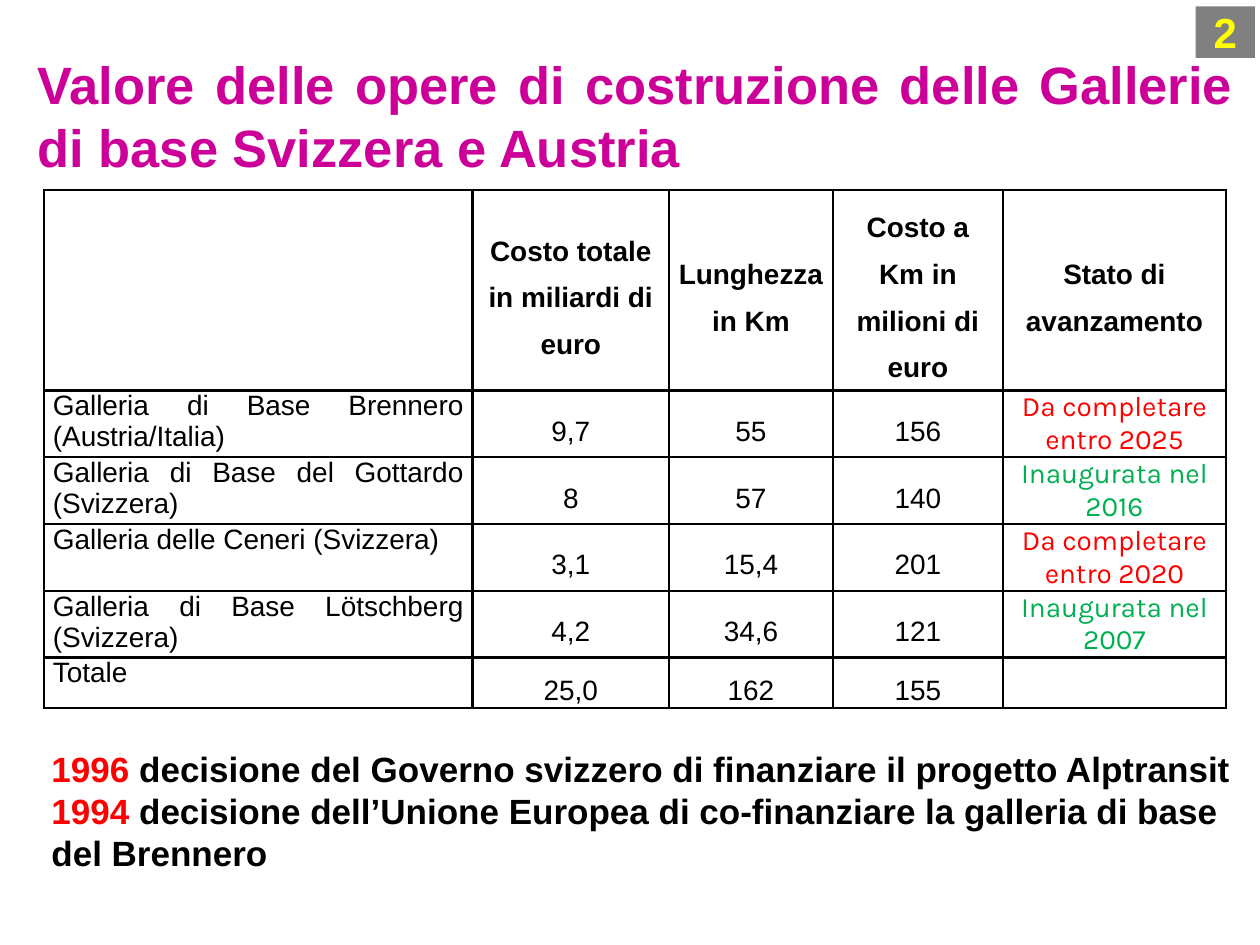
"""Build a slide on the value of the Swiss and Austrian base tunnels."""
import lxml.etree
import pptx
import pptx.dml.color
import pptx.enum.shapes
import pptx.enum.text
import pptx.oxml.ns
import pptx.util

Inches = pptx.util.Inches
ALIGN = pptx.enum.text.PP_ALIGN
ANCHOR = pptx.enum.text.MSO_ANCHOR

BLACK, RED, GREEN = "000000", "FF0000", "00B050"
COLUMN_WIDTHS = [3.4, 1.56, 1.3, 1.35, 1.77]
ROW_HEIGHTS = [1.59] + [0.53] * 4 + [0.4]
HEADINGS = ["", "Costo totale in miliardi di euro", "Lunghezza in Km",
            "Costo a Km in milioni di euro", "Stato di avanzamento"]
TUNNELS = [
    ["Galleria di Base Brennero (Austria/Italia)", "9,7", "55", "156", "Da completare\nentro 2025"],
    ["Galleria di Base del Gottardo (Svizzera)", "8", "57", "140", "Inaugurata nel 2016"],
    ["Galleria delle Ceneri (Svizzera)", "3,1", "15,4", "201", "Da completare entro 2020"],
    ["Galleria di Base Lötschberg (Svizzera)", "4,2", "34,6", "121", "Inaugurata nel 2007"],
    ["Totale", "25,0", "162", "155", ""],
]
DECISIONS = [
    ("1996 ", "decisione del Governo svizzero di finanziare il progetto Alptransit"),
    ("1994", " decisione dell’Unione Europea di co-finanziare la galleria di base del Brennero"),
]


def color(value):
    return pptx.dml.color.RGBColor.from_string(value)


def style_font(font, size, value, bold=False, name="Arial"):
    font.size = pptx.util.Pt(size)
    font.name = name
    font.bold = bold
    font.color.rgb = color(value)


def style_paragraphs(frame, align, spacing, *font_style):
    for para in frame.paragraphs:
        para.alignment = align
        para.line_spacing = spacing
        style_font(para.font, *font_style)
        for span in para.runs:
            style_font(span.font, *font_style)


def add_text_box(slide, left, top, width, height):
    box = slide.shapes.add_textbox(Inches(left), Inches(top), Inches(width), Inches(height))
    box.text_frame.word_wrap = True
    return box.text_frame


def add_title(slide):
    frame = add_text_box(slide, 0.2, 0.36, 9.69, 1.11)
    frame.vertical_anchor = ANCHOR.MIDDLE
    frame.text = "Valore delle opere di costruzione delle Gallerie di base Svizzera e Austria"
    style_paragraphs(frame, ALIGN.JUSTIFY, 1.0, 30, "CC0099", True)


def set_borders(cell, value, points):
    properties = cell._tc.get_or_add_tcPr()
    for position, side in enumerate(["lnL", "lnR", "lnT", "lnB"]):
        line = lxml.etree.Element(pptx.oxml.ns.qn(f"a:{side}"), w=str(pptx.util.Pt(points)))
        fill = lxml.etree.SubElement(line, pptx.oxml.ns.qn("a:solidFill"))
        lxml.etree.SubElement(fill, pptx.oxml.ns.qn("a:srgbClr"), val=value)
        properties.insert(position, line)


def fill_cell(cell, text, row, column):
    cell.fill.background()
    set_borders(cell, BLACK, 1.5)
    cell.margin_left = cell.margin_right = Inches(0.07)
    cell.margin_top = cell.margin_bottom = 0
    cell.text_frame.text = text
    if column == 0:
        style_paragraphs(cell.text_frame, ALIGN.JUSTIFY, 1.0, 16, BLACK)
        return
    cell.vertical_anchor = ANCHOR.MIDDLE
    if row > 0 and column == len(HEADINGS) - 1:
        status_color = GREEN if text.startswith("Inaugurata") else RED
        style_paragraphs(cell.text_frame, ALIGN.CENTER, 1.0, 16, status_color, False, "Karla")
    else:
        style_paragraphs(cell.text_frame, ALIGN.CENTER, 1.5, 16, BLACK, row == 0)


def add_tunnel_table(slide):
    rows = [HEADINGS] + TUNNELS
    table = slide.shapes.add_table(
        len(rows), len(HEADINGS), Inches(0.35), Inches(1.51),
        Inches(sum(COLUMN_WIDTHS)), Inches(sum(ROW_HEIGHTS))).table
    table.first_row = table.horz_banding = False
    for column, width in zip(table.columns, COLUMN_WIDTHS):
        column.width = Inches(width)
    for table_row, height in zip(table.rows, ROW_HEIGHTS):
        table_row.height = Inches(height)
    for row, texts in enumerate(rows):
        for column, text in enumerate(texts):
            fill_cell(table.cell(row, column), text, row, column)


def add_decisions(slide):
    frame = add_text_box(slide, 0.31, 5.88, 9.57, 1.11)
    for index, (year, decision) in enumerate(DECISIONS):
        para = frame.add_paragraph() if index else frame.paragraphs[0]
        for text, value in [(year, RED), (decision, BLACK)]:
            span = para.add_run()
            span.text = text
            style_font(span.font, 20, value, True)


def add_page_number(slide):
    box = slide.shapes.add_shape(pptx.enum.shapes.MSO_SHAPE.RECTANGLE,
                                 Inches(9.49), Inches(0.05), Inches(0.47), Inches(0.41))
    box.shadow.inherit = False
    box.fill.solid()
    box.fill.fore_color.rgb = color("808080")
    box.line.fill.background()
    frame = box.text_frame
    frame.word_wrap = False
    frame.vertical_anchor = ANCHOR.MIDDLE
    frame.text = "2"
    style_paragraphs(frame, ALIGN.CENTER, 1.0, 24, "FFFF00", True)


def main():
    deck = pptx.Presentation()
    deck.slide_width, deck.slide_height = Inches(10), Inches(7.5)
    slide = deck.slides.add_slide(deck.slide_layouts[6])
    add_tunnel_table(slide)
    add_title(slide)
    add_decisions(slide)
    add_page_number(slide)
    deck.save("out.pptx")


if __name__ == "__main__":
    main()
